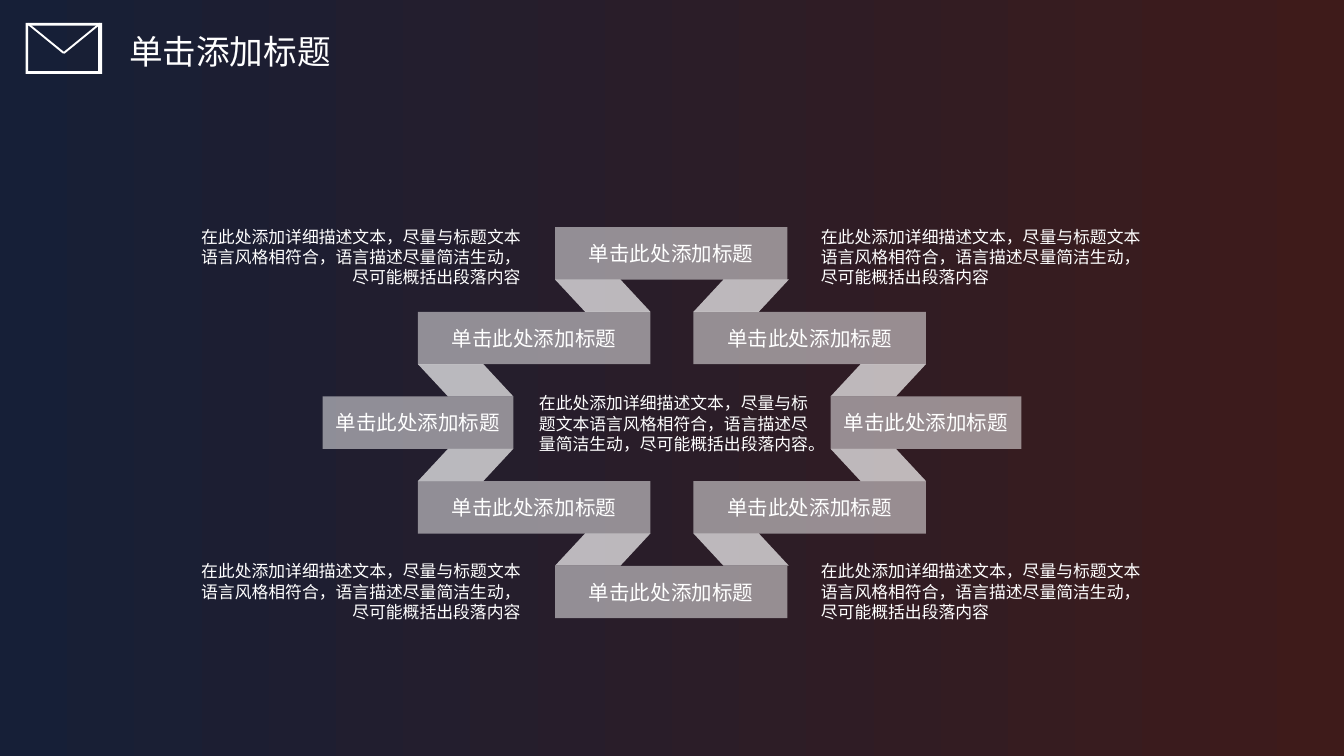
from dataclasses import dataclass

from lxml.etree import SubElement
from pptx import Presentation
from pptx.dml.color import RGBColor
from pptx.enum.shapes import MSO_SHAPE
from pptx.enum.text import MSO_ANCHOR, MSO_AUTO_SIZE, PP_ALIGN
from pptx.oxml.ns import qn
from pptx.util import Inches, Pt

WHITE = "FFFFFF"
LABEL = "单击此处添加标题"
DETAIL = "在此处添加详细描述文本，尽量与标题文本语言风格相符合，语言描述尽量简洁生动，尽可能概括出段落内容"
FIRST_ROW, ROW_STEP = 1.69, 0.63
BANNER_HEIGHT, FOLD_HEIGHT, FOLD_WIDTH = 0.39, 0.24, 0.71


@dataclass
class Banner:
    left: float
    row: int
    width: float = 1.73


@dataclass
class Fold:
    left: float
    row: int
    flips: tuple = ()


@dataclass
class Caption:
    left: float
    top: float
    width: float
    text: str
    align: PP_ALIGN


BANNERS = [
    Banner(4.13, 0), Banner(3.11, 1), Banner(5.16, 1),
    Banner(2.4, 2, 1.42), Banner(6.18, 2, 1.42),
    Banner(3.11, 3), Banner(5.16, 3), Banner(4.13, 4),
]
FOLDS = [
    Fold(4.13, 0, ("flipH",)), Fold(5.16, 0),
    Fold(3.11, 1, ("flipH",)), Fold(6.18, 1),
    Fold(3.11, 2, ("flipH", "flipV")), Fold(6.18, 2, ("flipV",)),
    Fold(4.13, 3, ("flipH", "flipV")), Fold(5.16, 3, ("flipV",)),
]
CAPTIONS = [Caption(3.9, 2.87, 2.22, DETAIL + "。", PP_ALIGN.CENTER)] + [
    Caption(left, top, 2.6, DETAIL, align)
    for top in (1.63, 4.12)
    for left, align in ((1.37, PP_ALIGN.RIGHT), (6.01, PP_ALIGN.LEFT))
]
ENVELOPE = [
    [
        [(0.19, 0.17), (0.76, 0.17), (0.76, 0.55), (0.19, 0.55)],
        [(0.21, 0.19), (0.21, 0.53), (0.73, 0.53), (0.73, 0.19)],
    ],
    [[(0.2, 0.18), (0.21, 0.17), (0.48, 0.39), (0.47, 0.4)]],
    [[(0.47, 0.39), (0.74, 0.17), (0.75, 0.18), (0.48, 0.4)]],
]


def color(value: str) -> RGBColor:
    return RGBColor.from_string(value)


def paint(shape, opacity: int = 100) -> None:
    shape.shadow.inherit = False
    shape.line.fill.background()
    shape.fill.solid()
    shape.fill.fore_color.rgb = color(WHITE)
    if opacity < 100:
        tint = shape.fill._xPr.find(qn("a:solidFill"))[0]
        SubElement(tint, qn("a:alpha")).set("val", str(opacity * 1000))


def place(shape, left: float, top: float, width: float, height: float) -> None:
    frame = {"left": left, "top": top, "width": width, "height": height}
    for name, value in frame.items():
        setattr(shape, name, Inches(value))


def write(box, text: str, size: float, font: str, align: PP_ALIGN) -> None:
    frame_format = {
        "word_wrap": True,
        "auto_size": MSO_AUTO_SIZE.NONE,
        "vertical_anchor": MSO_ANCHOR.MIDDLE,
    }
    for name, value in frame_format.items():
        setattr(box.text_frame, name, value)
    para = box.text_frame.paragraphs[0]
    para.alignment = align
    span = para.add_run()
    span.text = text
    for name, value in {"size": Pt(size), "name": font}.items():
        setattr(span.font, name, value)
    span.font.color.rgb = color(WHITE)


def draw_outline(page, contours: list) -> None:
    points = [[(Inches(x), Inches(y)) for x, y in contour] for contour in contours]
    builder = page.shapes.build_freeform(*points[0][0])
    builder.add_line_segments(points[0][1:], close=True)
    for contour in points[1:]:
        builder.move_to(*contour[0])
        builder.add_line_segments(contour[1:], close=True)
    paint(builder.convert_to_shape())


def draw_banner(page, banner: Banner) -> None:
    shape = page.shapes.add_shape(MSO_SHAPE.RECTANGLE, 0, 0, 0, 0)
    top = FIRST_ROW + banner.row * ROW_STEP
    place(shape, banner.left, top, banner.width, BANNER_HEIGHT)
    paint(shape, 50)


def draw_fold(page, fold: Fold) -> None:
    shape = page.shapes.add_shape(MSO_SHAPE.PARALLELOGRAM, 0, 0, 0, 0)
    top = FIRST_ROW + BANNER_HEIGHT + fold.row * ROW_STEP
    place(shape, fold.left, top, FOLD_WIDTH, FOLD_HEIGHT)
    shape.adjustments[0] = 0.93
    for flip in fold.flips:
        shape._element.spPr.xfrm.set(flip, "1")
    paint(shape, 69)


def draw_label(page, banner: Banner) -> None:
    width = max(banner.width, 1.57)
    left = banner.left - (width - banner.width) / 2
    box = page.shapes.add_textbox(0, 0, 0, 0)
    place(box, left, FIRST_ROW + banner.row * ROW_STEP + 0.05, width, 0.29)
    write(box, LABEL, 11, "Calibri", PP_ALIGN.CENTER)


def draw_caption(page, caption: Caption) -> None:
    box = page.shapes.add_textbox(0, 0, 0, 0)
    place(box, caption.left, caption.top, caption.width, 0.56)
    write(box, caption.text, 9, "Calibri", caption.align)


def main() -> None:
    deck = Presentation()
    deck.slide_width = Inches(10)
    deck.slide_height = deck.slide_width * 9 // 16
    page = deck.slides.add_slide(deck.slide_layouts[5])

    backdrop = page.background.fill
    backdrop.gradient()
    backdrop.gradient_angle = 0
    for stop, value in zip(backdrop.gradient_stops, ("161F37", "3E1B1A")):
        stop.color.rgb = color(value)

    title = page.shapes.title
    place(title, 0.86, 0.18, 2.16, 0.4)
    write(title, "单击添加标题", 18, "Noto Sans CJK SC", PP_ALIGN.LEFT)

    for contours in ENVELOPE:
        draw_outline(page, contours)
    for banner in BANNERS:
        draw_banner(page, banner)
    for fold in FOLDS:
        draw_fold(page, fold)
    for banner in BANNERS:
        draw_label(page, banner)
    for caption in CAPTIONS:
        draw_caption(page, caption)

    deck.save("out.pptx")


if __name__ == "__main__":
    main()
